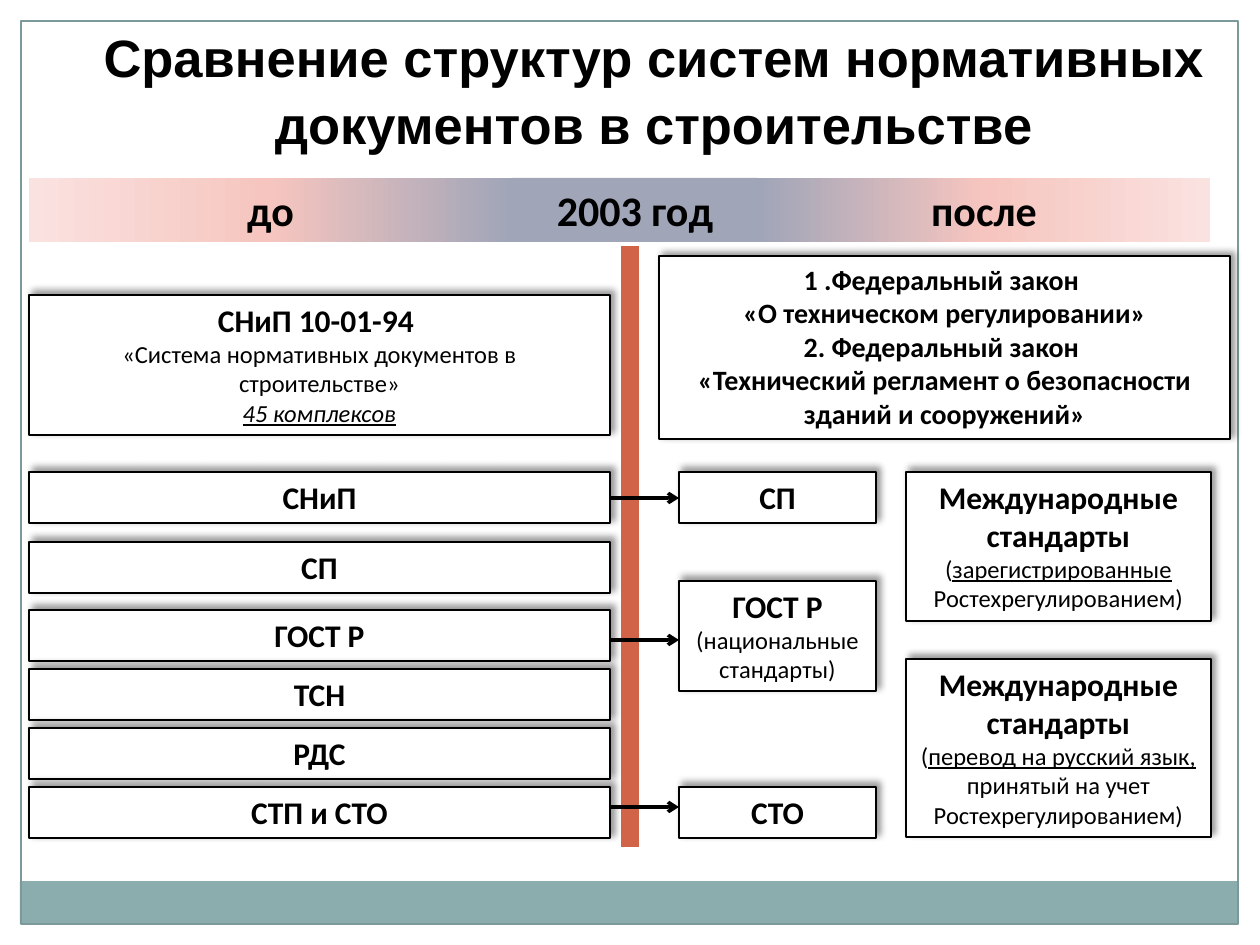
from dataclasses import dataclass
from lxml.etree import SubElement
from pptx import Presentation
from pptx.dml.color import RGBColor
from pptx.enum.shapes import MSO_CONNECTOR, MSO_SHAPE
from pptx.enum.text import MSO_ANCHOR, MSO_AUTO_SIZE, PP_ALIGN
from pptx.oxml import parse_xml
from pptx.oxml.ns import nsdecls, qn
from pptx.util import Emu, Pt


@dataclass(frozen=True)
class Theme:
    ink: str = "000000"
    paper: str = "FFFFFF"
    frame: str = "7C999A"
    foot: str = "8CADAE"
    split: str = "D16349"
    mid: str = "A0A5B8"
    fade: tuple = ((0, "A0A5B8"), (50, "F6C5BF"), (100, "FAE2E0"))
    head: str = "Arial"
    body: str = "Calibri"


THEME = Theme()
STYLES = {
    "title": dict(size=30, bold=True, font=THEME.head),
    "era": dict(size=24, bold=True),
    "name": dict(size=18, bold=True),
    "law": dict(size=16, bold=True),
    "note": dict(size=14),
    "under": dict(size=14, line=True),
    "count": dict(size=14, line=True, italic=True),
}

TITLE = "Сравнение структур систем нормативных документов в строительстве"
ERAS = [("до", 29, 483, 180), ("2003 год", 512, 246, None), ("после", 758, 452, 0)]
SYSTEM = [
    [("СНиП 10-01-94 ", "name")],
    [("«Система нормативных документов в строительстве»", "note")],
    [("45 комплексов", "count")],
]
OLD = [("СНиП", 472), ("СП", 542), ("ГОСТ Р", 610),
       ("ТСН", 669), ("РДС", 728), ("СТП и СТО", 787)]
LAWS = [[(text, "law")] for text in (
    "1 .Федеральный закон ",
    "«О техническом регулировании»",
    "2. Федеральный закон ",
    "«Технический регламент о безопасности зданий и сооружений»",
)]
NEW = [
    ([[("СП", "name")]], 472, 51, 498),
    ([[("ГОСТ Р", "name")], [("(национальные стандарты)", "note")]], 581, 110, 640),
    ([[("СТО", "name")]], 787, 51, 807),
]
WORLD_HEAD = [("Международные стандарты", "name")]
WORLD = [
    ([("(", "note"), ("зарегистрированные ", "under"),
      ("Ростехрегулированием)", "note")], 472, 149),
    ([("(", "note"), ("перевод на русский язык, ", "under"),
      ("принятый на учет Ростехрегулированием)", "note")], 659, 178),
]

LEFT, WIDE, ROW = 29, 581, 51
NEW_X, NEW_W = 679, 197
WORLD_X, WORLD_W = 906, 305


def px(count):
    return Emu(round(count * 914400 / 126))


def color(code):
    return RGBColor.from_string(code)


def style_run(run, size, bold=False, italic=False, line=False, font=THEME.body):
    face = run.font
    face.size, face.name = Pt(size), font
    face.bold, face.italic, face.underline = bold, italic, line
    face.color.rgb = color(THEME.ink)


def write(frame, paras):
    frame.word_wrap = True
    frame.vertical_anchor = MSO_ANCHOR.TOP
    frame.auto_size = MSO_AUTO_SIZE.SHAPE_TO_FIT_TEXT
    for i, parts in enumerate(paras):
        para = frame.paragraphs[0] if i == 0 else frame.add_paragraph()
        para.alignment = PP_ALIGN.CENTER
        for text, style in parts:
            run = para.add_run()
            run.text = text
            style_run(run, **STYLES[style])


def add_rect(slide, x, y, w, h, fill=None, line=None, weight=1.5):
    shape = slide.shapes.add_shape(MSO_SHAPE.RECTANGLE, px(x), px(y), px(w), px(h))
    shape.shadow.inherit = False
    if fill:
        shape.fill.solid()
        shape.fill.fore_color.rgb = color(fill)
    else:
        shape.fill.background()
    if line:
        shape.line.color.rgb = color(line)
        shape.line.width = Pt(weight)
    else:
        shape.line.fill.background()
    return shape


def add_card(slide, x, y, w, h, paras):
    card = add_rect(slide, x, y, w, h, THEME.paper, THEME.ink)
    glow = card.element.spPr.find(qn("a:effectLst"))
    glow.append(parse_xml(
        f'<a:outerShdw {nsdecls("a")} blurRad="{Pt(4)}" dist="{Pt(3)}" '
        f'dir="{315 * 60000}" algn="bl" rotWithShape="0">'
        f'<a:srgbClr val="{THEME.ink}"><a:alpha val="40000"/></a:srgbClr>'
        '</a:outerShdw>'))
    write(card.text_frame, paras)


def add_era(slide, text, x, w, angle):
    bar = add_rect(slide, x, 178, w, 64, THEME.mid)
    if angle is not None:
        stops = "".join(f'<a:gs pos="{at * 1000}"><a:srgbClr val="{code}"/></a:gs>'
                        for at, code in THEME.fade)
        props = bar.element.spPr
        props.replace(props.find(qn("a:solidFill")), parse_xml(
            f'<a:gradFill {nsdecls("a")} rotWithShape="1"><a:gsLst>{stops}</a:gsLst>'
            f'<a:lin ang="{angle * 60000}" scaled="1"/></a:gradFill>'))
    write(bar.text_frame, [[(text, "era")]])


def add_line(slide, start, end, code, weight, arrow=False):
    line = slide.shapes.add_connector(
        MSO_CONNECTOR.STRAIGHT, *map(px, start), *map(px, end))
    line.line.color.rgb = color(code)
    line.line.width = Pt(weight)
    if arrow:
        SubElement(line.line._get_or_add_ln(), qn("a:tailEnd"), type="arrow")
    SubElement(line.element.spPr, qn("a:effectLst"))


def set_title(slide):
    title = slide.shapes.title
    title.left, title.top, title.width, title.height = map(px, (74, 16, 1160, 139))
    write(title.text_frame, [[(TITLE, "title")]])
    title.text_frame.paragraphs[0].line_spacing = 1.05


def main():
    deck = Presentation()
    deck.slide_width, deck.slide_height = px(1260), px(945)
    slide = deck.slides.add_slide(deck.slide_layouts[5])

    add_rect(slide, 20, 881, 1218, 43, THEME.foot)
    add_rect(slide, 21, 21, 1217, 903, line=THEME.frame, weight=0.75)
    set_title(slide)
    for era in ERAS:
        add_era(slide, *era)
    add_line(slide, (630, 246), (630, 847), THEME.split, 10)

    add_card(slide, LEFT, 295, WIDE, 140, SYSTEM)
    for text, y in OLD:
        add_card(slide, LEFT, y, WIDE, ROW, [[(text, "name")]])
    add_card(slide, 659, 256, 571, 183, LAWS)
    for note, y, h in WORLD:
        add_card(slide, WORLD_X, y, WORLD_W, h, [WORLD_HEAD, note])
    for paras, y, h, link in NEW:
        add_card(slide, NEW_X, y, NEW_W, h, paras)
        add_line(slide, (LEFT + WIDE, link), (NEW_X, link), THEME.ink, 2, arrow=True)

    deck.save("out.pptx")


if __name__ == "__main__":
    main()
